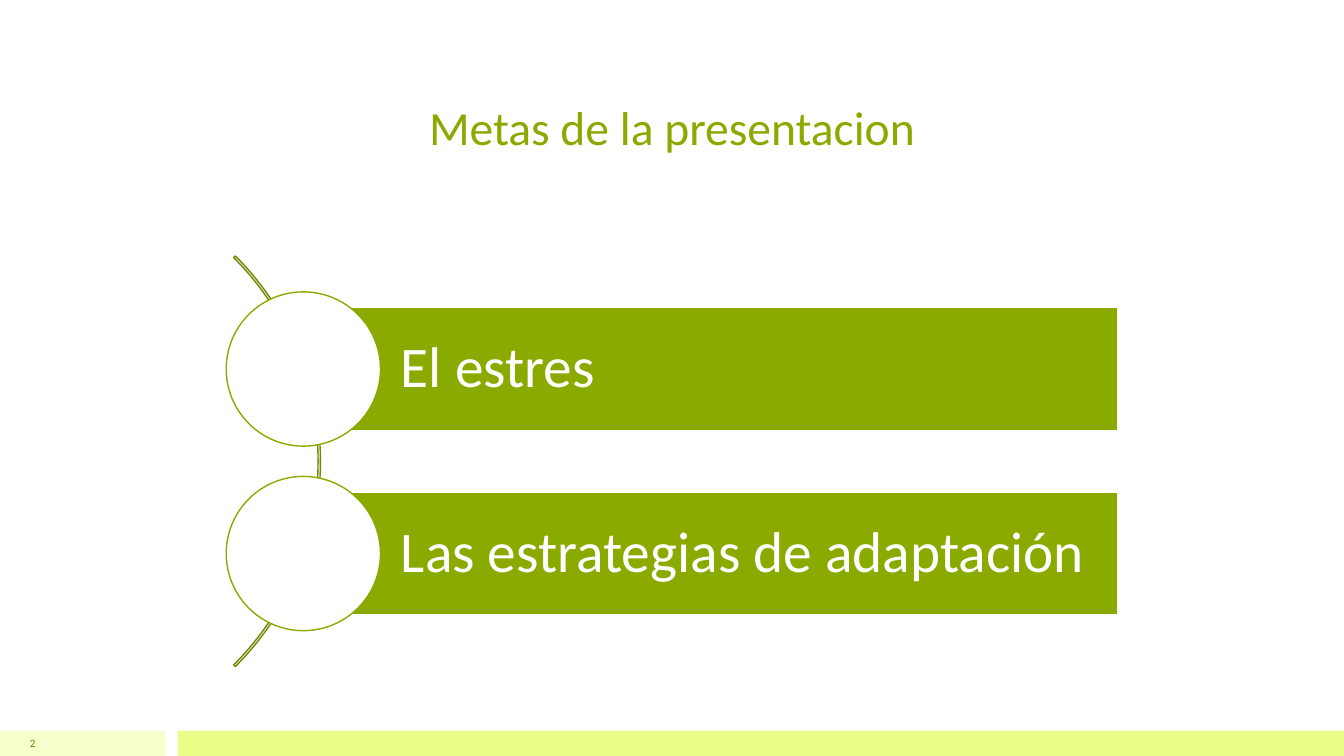
from pptx import Presentation
from pptx.dml.color import RGBColor
from pptx.enum.shapes import MSO_SHAPE
from pptx.enum.text import MSO_ANCHOR, PP_ALIGN
from pptx.util import Pt

GREEN = RGBColor(0x8B, 0xAA, 0x00)
DARK_GREEN = RGBColor(0x68, 0x80, 0x00)
ARC_GREEN = RGBColor(0x6F, 0x88, 0x00)
LIME = RGBColor(0xE9, 0xFF, 0x88)
PALE_LIME = RGBColor(0xF6, 0xFF, 0xCC)
WHITE = RGBColor(0xFF, 0xFF, 0xFF)

GOALS = ["El estres", "Las estrategias de adaptación"]
BAR_LEFT, BAR_WIDTH, BAR_HEIGHT = 216.7, 581.8, 87.8
CIRCLE, ARC = 110.2, 414.7
FIRST_MIDDLE, PITCH = 263.6, 131.8


def write(tf, text, size, color, align=PP_ALIGN.LEFT, anchor=MSO_ANCHOR.MIDDLE,
          insets=(7.2, 3.6, 7.2, 3.6), spacing=None):
    tf.word_wrap = True
    tf.vertical_anchor = anchor
    tf.margin_left, tf.margin_top, tf.margin_right, tf.margin_bottom = map(Pt, insets)
    p = tf.paragraphs[0]
    p.alignment = align
    p.line_spacing = spacing
    r = p.add_run()
    r.text = text
    r.font.name = "Calibri"
    r.font.size = Pt(size)
    r.font.color.rgb = color


class Deck:
    """Adds styled elements, measured in points, to the current slide."""

    def __init__(self, prs):
        self.s = prs.slides.add_slide(prs.slide_layouts[5])

    def title(self, text, x, y, w, h):
        sp = self.s.shapes.title
        sp.left, sp.top, sp.width, sp.height = map(Pt, (x, y, w, h))
        write(sp.text_frame, text, 34, GREEN, PP_ALIGN.CENTER, MSO_ANCHOR.BOTTOM)

    def shape(self, kind, x, y, w, h, fill=None, line=None):
        sp = self.s.shapes.add_shape(kind, Pt(x), Pt(y), Pt(w), Pt(h))
        sp.shadow.inherit = False
        if fill is None:
            sp.fill.background()
        else:
            sp.fill.solid()
            sp.fill.fore_color.rgb = fill
        if line is None:
            sp.line.fill.background()
        else:
            sp.line.color.rgb = line
            sp.line.width = Pt(1)
        return sp

    def label(self, text, x, y, w, h, **fmt):
        sp = self.s.shapes.add_textbox(Pt(x), Pt(y), Pt(w), Pt(h))
        write(sp.text_frame, text, **fmt)

    def arc(self, x, y, size):
        sp = self.shape(MSO_SHAPE.BLOCK_ARC, x, y, size, size, line=ARC_GREEN)
        for i, value in enumerate((189, 27, 0.004)):
            sp.adjustments[i] = value

    def goal(self, text, middle):
        bar = self.shape(MSO_SHAPE.RECTANGLE, BAR_LEFT, middle - BAR_HEIGHT / 2,
                         BAR_WIDTH, BAR_HEIGHT, GREEN, WHITE)
        write(bar.text_frame, text, 41, WHITE, insets=(69.7, 8, 8, 8), spacing=0.9)
        self.shape(MSO_SHAPE.OVAL, BAR_LEFT - CIRCLE / 2, middle - CIRCLE / 2,
                   CIRCLE, CIRCLE, WHITE, GREEN)


def main():
    prs = Presentation()
    prs.slide_width, prs.slide_height = Pt(960), Pt(540)
    deck = Deck(prs)
    deck.shape(MSO_SHAPE.RECTANGLE, 0, 522, 118, 18, PALE_LIME)
    deck.shape(MSO_SHAPE.RECTANGLE, 126.8, 522, 833.2, 18, LIME)
    deck.title("Metas de la presentacion", 111, 21.6, 738, 92.9)
    deck.label("2", 0, 522, 32.4, 18, size=8, color=DARK_GREEN, align=PP_ALIGN.RIGHT)
    deck.arc(-185.8, FIRST_MIDDLE + PITCH / 2 - ARC / 2, ARC)
    for i, text in enumerate(GOALS):
        deck.goal(text, FIRST_MIDDLE + i * PITCH)
    prs.save("out.pptx")


if __name__ == "__main__":
    main()
